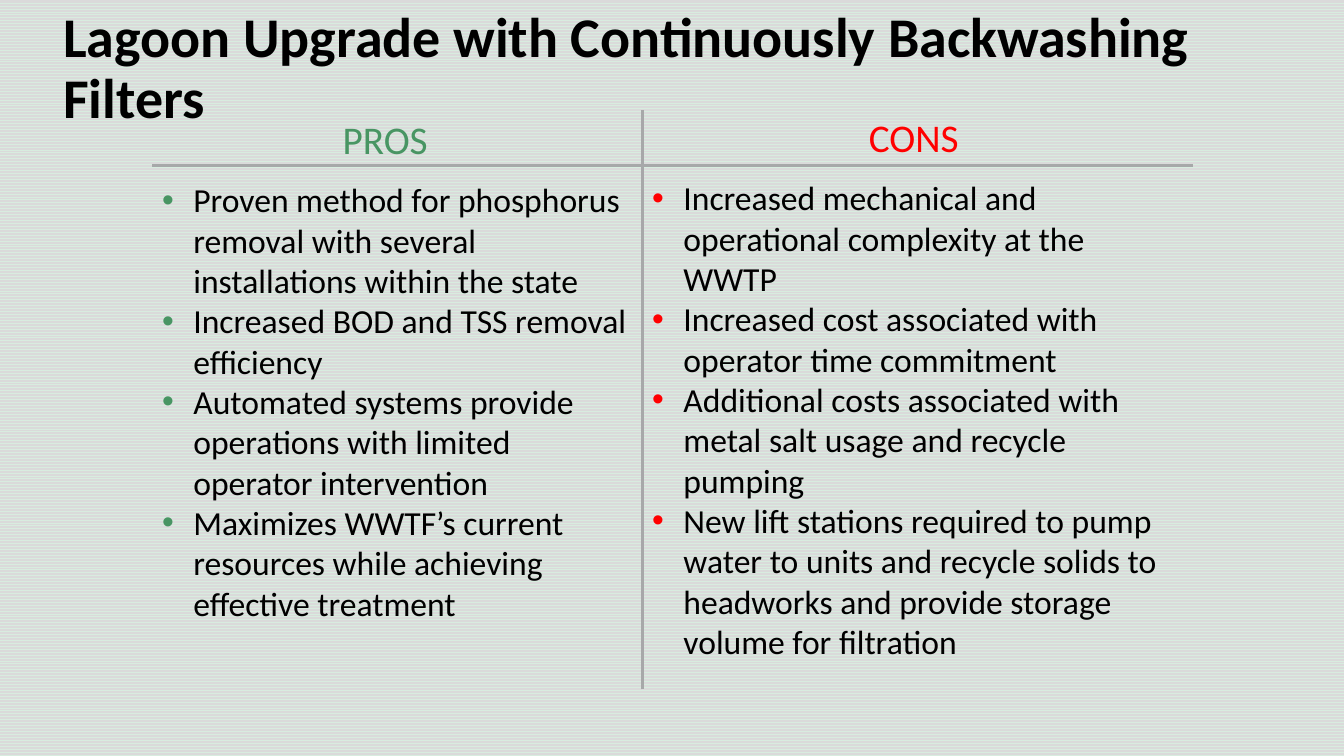
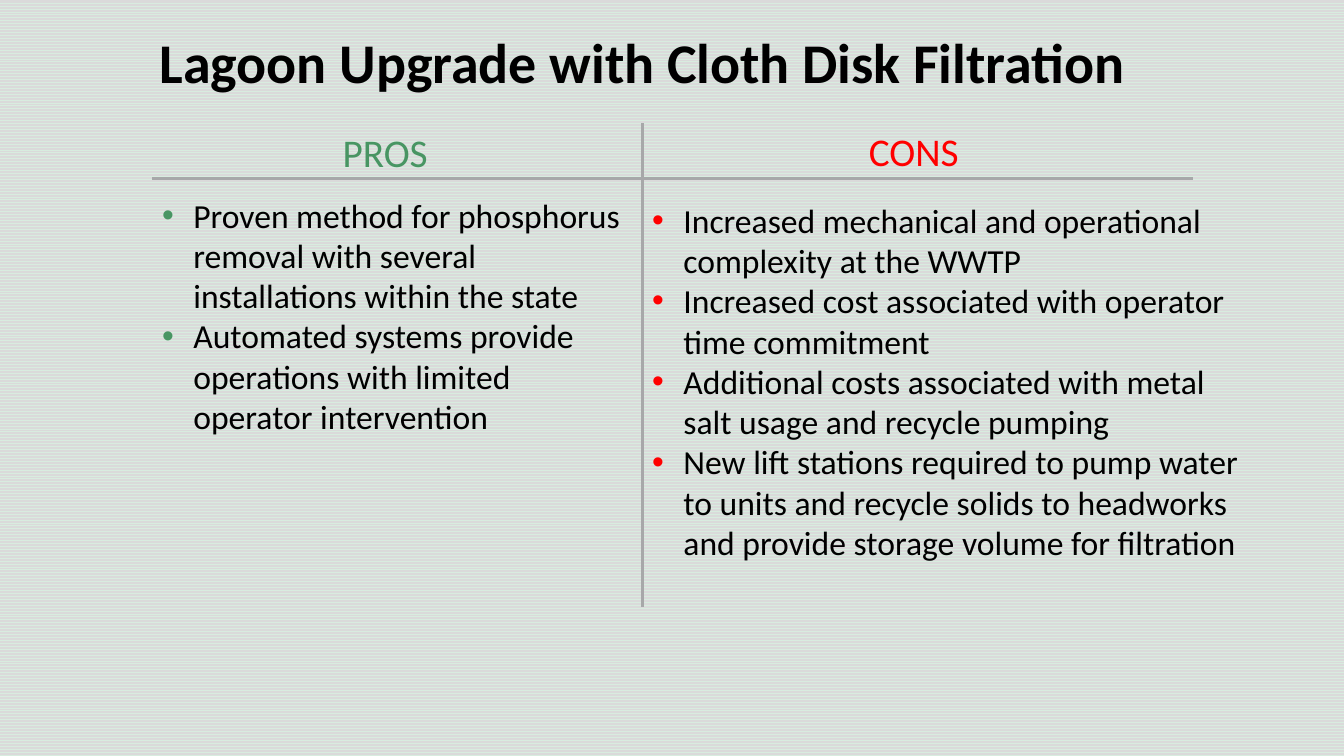
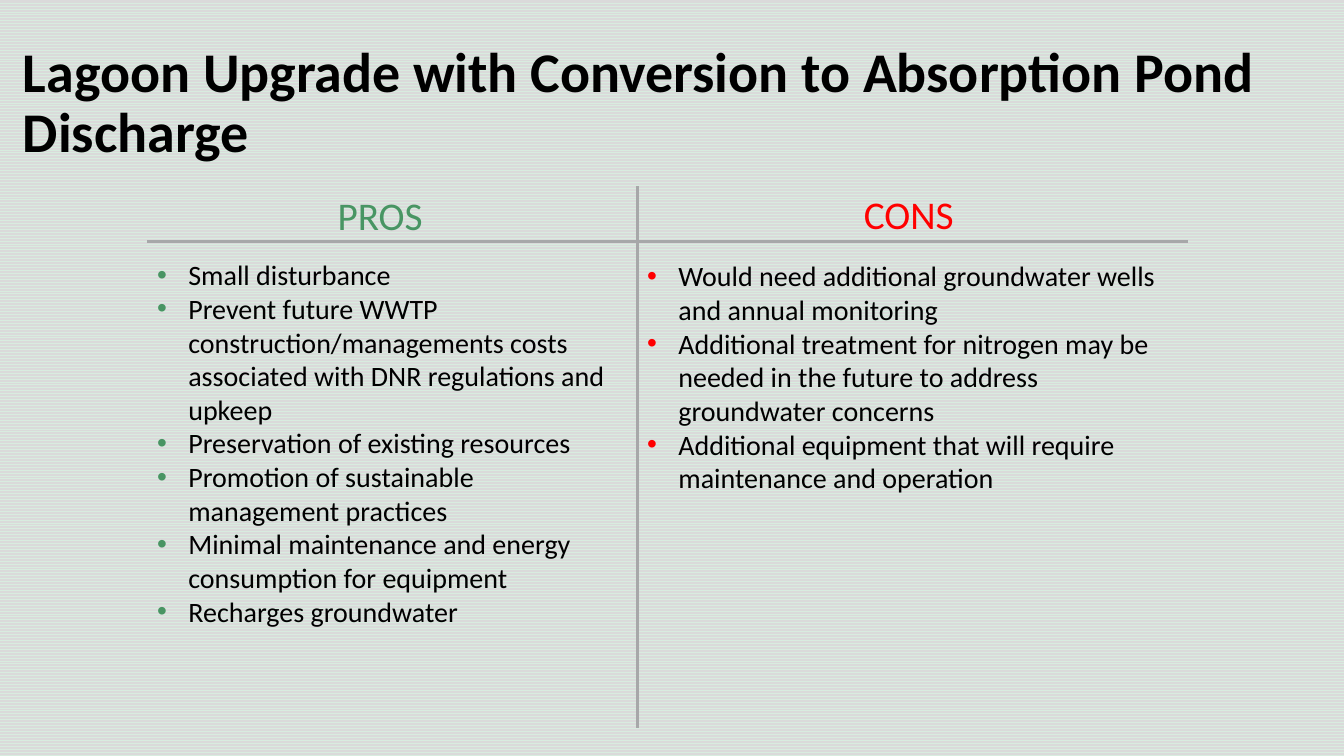
from dataclasses import dataclass

from lxml import etree
from pptx import Presentation
from pptx.dml.color import RGBColor
from pptx.enum.dml import MSO_PATTERN
from pptx.enum.shapes import MSO_CONNECTOR
from pptx.enum.text import MSO_ANCHOR, MSO_AUTO_SIZE, PP_ALIGN
from pptx.oxml.ns import qn
from pptx.util import Inches, Pt

ZIG_ZAG = MSO_PATTERN.ZIG_ZAG
STRAIGHT = MSO_CONNECTOR.STRAIGHT
TOP, MIDDLE = MSO_ANCHOR.TOP, MSO_ANCHOR.MIDDLE
GROW, FIXED = MSO_AUTO_SIZE.SHAPE_TO_FIT_TEXT, MSO_AUTO_SIZE.NONE
LEFT, CENTER = PP_ALIGN.LEFT, PP_ALIGN.CENTER


@dataclass(frozen=True)
class Theme:
    font: str = "Calibri"
    ink: str = "000000"
    pro: str = "489563"
    con: str = "FF0000"
    rule: str = "A7A8A9"
    back_light: str = "D8ECDF"
    back_dark: str = "DADADA"
    title: int = 40
    heading: int = 28
    body: int = 24
    body_small: int = 20
    rule_width: float = 2.25
    indent: float = 0.31


@dataclass(frozen=True)
class Column:
    top: float
    width: float
    height: float
    items: tuple


T = Theme()
PANEL_W = 10.32
SPLIT_X = 4.86
HEAD_H = 0.55
HEADING_SIZE = (1.28, 0.57)

FILTER_CONS = (
    "Increased mechanical and operational complexity at the WWTP",
    "Increased cost associated with operator time commitment",
    "Additional costs associated with metal salt usage and recycle pumping",
    "New lift stations required to pump water to units and recycle solids to "
    "headworks and provide storage volume for filtration",
)
PROVEN = "Proven method for phosphorus removal with several installations within the state"
AUTOMATED = "Automated systems provide operations with limited operator intervention"

SLIDES = (
    dict(
        title="Lagoon Upgrade with Continuously Backwashing Filters",
        title_box=(0.53, 0, 12.27, 1.39),
        panel=(1.51, 1.09, 5.75),
        pros=Column(0.64, 4.87, 4.54, (
            PROVEN,
            "Increased BOD and TSS removal efficiency",
            AUTOMATED,
            "Maximizes WWTF’s current resources while achieving effective treatment",
        )),
        cons=Column(0.62, 5.45, 4.95, FILTER_CONS),
    ),
    dict(
        title="Lagoon Upgrade with Cloth Disk Filtration",
        title_box=(0, 0, 12.74, 1.29),
        title_align=CENTER,
        panel=(1.51, 1.22, 4.8),
        pros=Column(0.66, 4.87, 3.6, (PROVEN, AUTOMATED)),
        cons=Column(0.71, 6.02, 3.74, FILTER_CONS),
    ),
    dict(
        title="Lagoon Upgrade with Conversion to Absorption Pond Discharge",
        title_box=(0.13, 0.31, 13.2, 1.45),
        panel=(1.46, 1.85, 5.37),
        size=T.body_small,
        pros=Column(0.66, 4.87, 4.14, (
            "Small disturbance",
            "Prevent future WWTP construction/managements costs associated with "
            "DNR regulations and upkeep",
            "Preservation of existing resources",
            "Promotion of sustainable management practices",
            "Minimal maintenance and energy consumption for equipment",
            "Recharges groundwater",
        )),
        cons=Column(0.67, 5.45, 2.46, (
            "Would need additional groundwater wells and annual monitoring",
            "Additional treatment for nitrogen may be needed in the future to "
            "address groundwater concerns",
            "Additional equipment that will require maintenance and operation",
        )),
    ),
)


def rgb(color):
    return RGBColor.from_string(color)


def add_bullet(p, color):
    pPr = p._p.get_or_add_pPr()
    pPr.set("marL", str(Inches(T.indent)))
    pPr.set("indent", str(-Inches(T.indent)))
    bullet_color = etree.SubElement(pPr, qn("a:buClr"))
    etree.SubElement(bullet_color, qn("a:srgbClr"), val=color)
    etree.SubElement(pPr, qn("a:buFont"), typeface="Arial")
    etree.SubElement(pPr, qn("a:buChar"), char="•")


def add_text(shapes, box, lines, *, size, color=T.ink, bold=False, align=LEFT,
             anchor=TOP, fit=GROW, spacing=None, bullet=None):
    tf = shapes.add_textbox(*map(Inches, box)).text_frame
    tf.word_wrap = True
    tf.auto_size = fit
    tf.vertical_anchor = anchor
    for i, line in enumerate(lines):
        p = tf.add_paragraph() if i else tf.paragraphs[0]
        p.alignment = align
        if spacing:
            p.line_spacing = spacing
        if bullet:
            add_bullet(p, bullet)
        r = p.add_run()
        r.text = line
        r.font.name = T.font
        r.font.size = Pt(size)
        r.font.bold = bold
        r.font.color.rgb = rgb(color)


def add_rule(shapes, *ends):
    line = shapes.add_connector(STRAIGHT, *map(Inches, ends))
    line.line.color.rgb = rgb(T.rule)
    line.line.width = Pt(T.rule_width)
    etree.SubElement(line._element.spPr, qn("a:effectLst"))


def add_panel(s, panel, pros, cons, size):
    left, top, height = panel
    shapes = s.shapes.add_group_shape().shapes
    split = left + SPLIT_X
    add_rule(shapes, left, top + HEAD_H, left + PANEL_W, top + HEAD_H)
    add_rule(shapes, split, top + height, split, top)
    columns = (
        ("PROS", T.pro, left, left + 1.79, top, pros),
        ("CONS", T.con, split, left + 7.01, top - 0.01, cons),
    )
    for heading, color, x, heading_x, heading_y, column in columns:
        add_text(shapes, (heading_x, heading_y, *HEADING_SIZE), [heading],
                 size=T.heading, color=color)
        add_text(shapes, (x, top + column.top, column.width, column.height),
                 column.items, size=size, bullet=color)


def add_comparison(prs, title, title_box, panel, pros, cons,
                   title_align=LEFT, size=T.body):
    s = prs.slides.add_slide(prs.slide_layouts[6])
    add_panel(s, panel, pros, cons, size)
    add_text(s.shapes, title_box, [title], size=T.title, bold=True,
             align=title_align, anchor=MIDDLE, fit=FIXED, spacing=0.9)


def set_background(prs):
    fill = prs.slide_master.background.fill
    fill.patterned()
    fill.pattern = ZIG_ZAG
    fill.fore_color.rgb = rgb(T.back_light)
    fill.back_color.rgb = rgb(T.back_dark)


def main():
    prs = Presentation()
    prs.slide_width = Inches(13.33)
    prs.slide_height = Inches(7.5)
    set_background(prs)
    for slide in SLIDES:
        add_comparison(prs, **slide)
    prs.save("out.pptx")


if __name__ == "__main__":
    main()
